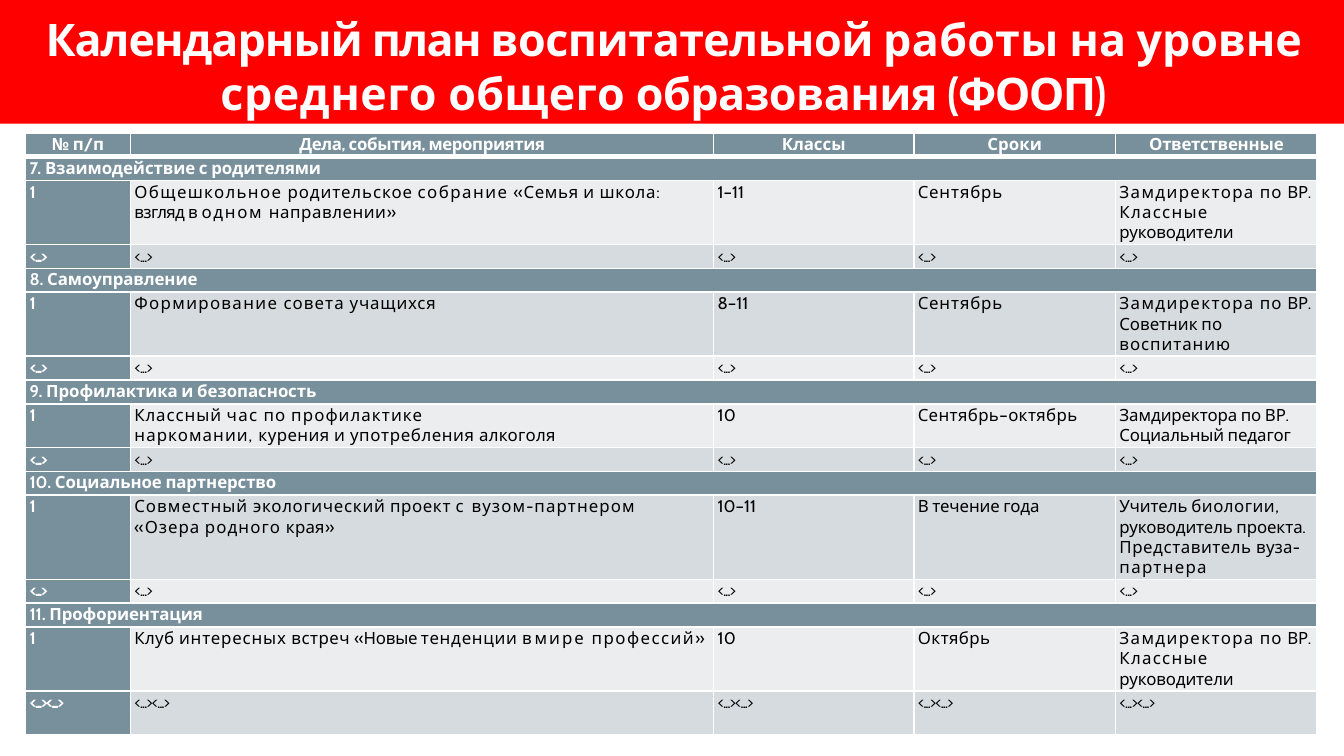
from pptx import Presentation
from pptx.dml.color import RGBColor
from pptx.enum.shapes import MSO_SHAPE
from pptx.enum.text import MSO_ANCHOR, MSO_AUTO_SIZE, PP_ALIGN
from pptx.oxml.ns import qn
from pptx.util import Inches, Pt
from lxml import etree

RECTANGLE = MSO_SHAPE.RECTANGLE
TOP = MSO_ANCHOR.TOP
NO_FIT = MSO_AUTO_SIZE.NONE
LEFT, CENTER = PP_ALIGN.LEFT, PP_ALIGN.CENTER
FONT = "Cabin"
WHITE, BLACK, RED, SLATE = "FFFFFF", "000000", "FF0000", "78909C"
STRIPES = ("EBEDEE", "D5DBDE")
rgb = RGBColor.from_string


def add_runs(p, runs, size, color, bold):
    """Append (text, letter spacing in points) pairs to a paragraph."""
    for text, spacing in runs:
        r = p.add_run()
        r.text = text
        r.font.name, r.font.size, r.font.bold = FONT, Pt(size), bold
        r.font.color.rgb = rgb(color)
        r.font._element.set("spc", str(round(spacing * 100)))


def fill_cell(cell, paragraphs, fill, color=BLACK, bold=False, align=LEFT, bottom=1):
    """Write the paragraphs, paint the cell and draw white borders."""
    cell.margin_left = cell.margin_right = cell.margin_bottom = 0
    cell.margin_top = Inches(0.01)
    cell.vertical_anchor = TOP
    tf = cell.text_frame
    for i, runs in enumerate(paragraphs):
        p = tf.add_paragraph() if i else tf.paragraphs[0]
        p.alignment = align
        p.space_before = Pt(0 if i else 0.8)
        if align == LEFT:
            p._p.get_or_add_pPr().set("marL", str(Inches(0.03)))
        add_runs(p, runs, 9, color, bold)
    tcPr = cell._tc.get_or_add_tcPr()
    for side in ("a:lnL", "a:lnR", "a:lnT", "a:lnB"):
        width = bottom if side == "a:lnB" else 1
        ln = etree.SubElement(tcPr, qn(side), w=str(Pt(width)))
        solid = etree.SubElement(ln, qn("a:solidFill"))
        etree.SubElement(solid, qn("a:srgbClr"), val=WHITE)
    cell.fill.solid()
    cell.fill.fore_color.rgb = rgb(fill)


headers = [("№ п/п", 0), ("Дела, события, мероприятия", -0.17), ("Классы", 0),
           ("Сроки", 0.1), ("Ответственные", -0.1)]
deputy = [("Замдиректора ", 0.75), ("по ", 0.55), ("ВР.", -0.1)]
class_teachers = [("Классные ", 0.7), ("руководители", -0.05)]

# Section title, lines in its first row, lines in its second row, cells of the first row
sections = [
    ("7. Взаимодействие с родителями", 3, 1, [
        [[("Общешкольное ", 0.75), ("родительское ", 0.5), ("собрание ", 0.8),
          ("«Семья ", 0.35), ("и школа: ", 0.45), ("взгляд ", -0.3), ("в ", 0),
          ("одном ", 0.9), ("направлении»", 0.3)]],
        [[("1–11", 0)]],
        [[("Сентябрь", 0.45)]],
        [deputy, class_teachers]]),
    ("8. Самоуправление", 3, 1, [
        [[("Формирование ", 0.75), ("совета ", 0.6), ("учащихся", 0.45)]],
        [[("8–11", 0)]],
        [[("Сентябрь", 0.45)]],
        [deputy, [("Советник по", 0)], [("воспитанию", 0.5)]]]),
    ("9. Профилактика и безопасность", 2, 1, [
        [[("Классный ", 0.5), ("час ", 0.7), ("по профилактике", 0.6)],
         [("наркомании, ", 0.6), ("курения ", 0.25), ("и ", 0.4),
          ("употребления ", 0.35), ("алкоголя", 0.2)]],
        [[("10", 0.1)]],
        [[("Сентябрь–октябрь", 0.2)]],
        [[("Замдиректора по ВР. Социальный педагог", -0.05)]]]),
    ("10. Социальное партнерство", 4, 1, [
        [[("Совместный ", 0.6), ("экологический ", 0.4), ("проект ", 0.35), ("с ", 1.1),
          ("вузом-партнером ", 0.6), ("«Озера ", 0.5), ("родного ", 0.6), ("края»", 0.1)]],
        [[("10–11", 0)]],
        [[("В течение года", -0.05)]],
        [[("Учитель ", 0), ("биологии, ", 0.3), ("руководитель проекта. ", -0.05),
          ("Представитель ", 0.3), ("вуза- ", 0.1), ("партнера", 0.7)]]]),
    ("11. Профориентация", 3, 2, [
        [[("Клуб ", 0.25), ("интересных ", 0.45), ("встреч ", 0.25), ("«Новые ", -0.1),
          ("тенденции ", 0.4), ("в ", -0.5), ("мире ", 1.1), ("профессий»", 0.8)]],
        [[("10", 0.1)]],
        [[("Октябрь", 0.2)]],
        [deputy, class_teachers]]),
]

prs = Presentation()
prs.slide_width = Inches(10)
prs.slide_height = prs.slide_width * 9 // 16
s = prs.slides.add_slide(prs.slide_layouts[5])

# Schedule table: each further text line makes a row taller by the same step
line_counts = [1]
for _, first, second, _ in sections:
    line_counts += [1, first, second]
row_count = len(line_counts)
line_step = 0.15
table_height = 4.48
base_height = (table_height - line_step * (sum(line_counts) - row_count)) / row_count

table = s.shapes.add_table(row_count, len(headers), Inches(0.19), Inches(0.99),
                           Inches(9.61), Inches(table_height)).table
for column, width in zip(table.columns, (0.78, 4.34, 1.49, 1.5, 1.5)):
    column.width = Inches(width)
for row, lines in zip(table.rows, line_counts):
    row.height = Inches(base_height + line_step * (lines - 1))

for col, header in enumerate(headers):
    fill_cell(table.cell(0, col), [[header]], SLATE, WHITE, True, CENTER, bottom=3)

for i, (heading, _, second, cells) in enumerate(sections):
    top = 1 + 3 * i
    table.cell(top, 0).merge(table.cell(top, len(headers) - 1))
    for col in range(len(headers)):
        fill_cell(table.cell(top, col), [] if col else [[(heading, -0.03)]], SLATE, WHITE, True)

    dots = "<...>" * second
    fill_cell(table.cell(top + 1, 0), [[("1", 0)]], SLATE, WHITE, True)
    fill_cell(table.cell(top + 2, 0), [[(dots, -1.1)]], SLATE, WHITE, True)
    for col, paragraphs in enumerate(cells, 1):
        fill_cell(table.cell(top + 1, col), paragraphs, STRIPES[(top + 1) % 2])
        fill_cell(table.cell(top + 2, col), [[(dots, -0.7)]], STRIPES[(top + 2) % 2])

# Long event names break before the last words
for row in (2, 11):
    table.cell(row, 1).margin_right = Inches(0.2)

# Red band with the title in front of it
band = s.shapes.add_shape(RECTANGLE, 0, 0, Inches(10), Inches(0.92))
band.shadow.inherit = False
band.fill.solid()
band.fill.fore_color.rgb = rgb(RED)
band.line.fill.background()

title = s.shapes.title
title.element.getparent().append(title.element)
title.left, title.top = Inches(0.16), Inches(0.08)
title.width, title.height = Inches(9.69), Inches(0.83)
tf = title.text_frame
tf.word_wrap = True
tf.auto_size = NO_FIT
tf.vertical_anchor = TOP
tf.margin_left = tf.margin_right = tf.margin_bottom = 0
tf.margin_top = Inches(0.01)
p = tf.paragraphs[0]
p.alignment = LEFT
p.space_before = Pt(1)
pPr = p._p.get_or_add_pPr()
pPr.set("marL", str(Inches(1.48)))
pPr.set("indent", str(Inches(-1.3)))
add_runs(p, [("Календарный ", -0.55), ("план ", -0.85), ("воспитательной ", -0.25),
             ("работы ", 0.2), ("на ", 0.1), ("уровне ", -0.1), ("среднего ", 0.3),
             ("общего ", 0.2), ("образования ", -0.3), ("(ФООП)", -0.85)], 24, WHITE, True)

prs.save("out.pptx")
